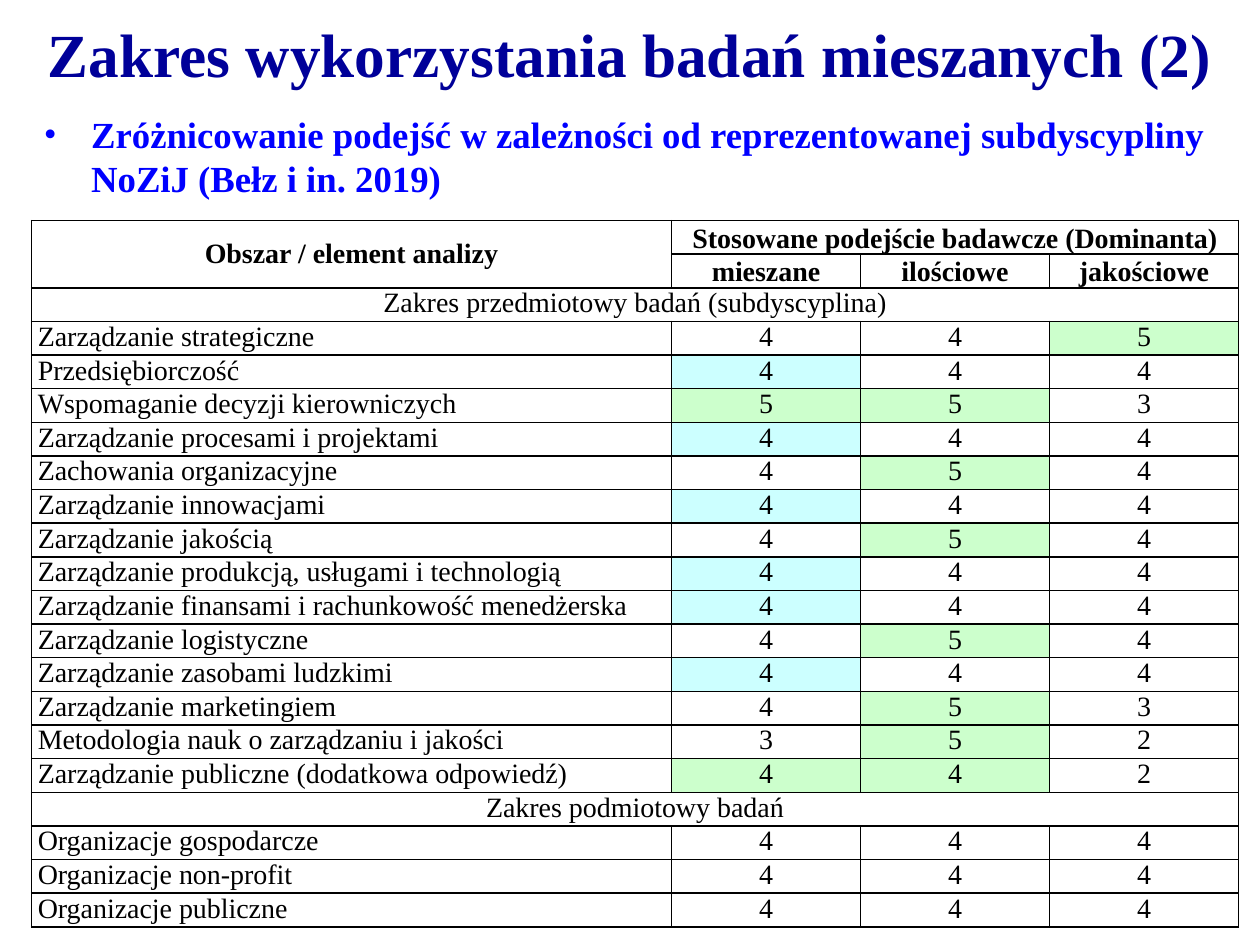
"""Build a slide with a table of research approaches by management subdiscipline."""
from lxml.etree import SubElement
from pptx import Presentation
from pptx.dml.color import RGBColor
from pptx.enum.text import MSO_ANCHOR as Anchor, MSO_AUTO_SIZE as AutoSize, PP_ALIGN as Align
from pptx.oxml.ns import qn
from pptx.util import Pt

FONT = "Times New Roman"
BLACK = RGBColor(0, 0, 0)
WHITE = RGBColor(255, 255, 255)
NAVY = RGBColor(0, 0, 0x99)
BLUE = RGBColor(0, 0, 255)
GREEN = RGBColor(0xCC, 255, 0xCC)
CYAN = RGBColor(0xCC, 255, 255)
FILLS = {"-": WHITE, "g": GREEN, "c": CYAN}

TITLE = "Zakres wykorzystania badań mieszanych (2)"
SUBTITLE = ("Zróżnicowanie podejść w zależności od reprezentowanej subdyscypliny "
            "NoZiJ (Bełz i in. 2019)")
AREA_HEADER = "Obszar / element analizy"
APPROACH_HEADER = "Stosowane podejście badawcze (Dominanta)"
APPROACHES = ["mieszane", "ilościowe", "jakościowe"]
SECTIONS = [
    ("Zakres przedmiotowy badań (subdyscyplina)", [
        ("Zarządzanie strategiczne", (4, 4, 5), "--g"),
        ("Przedsiębiorczość", (4, 4, 4), "c--"),
        ("Wspomaganie decyzji kierowniczych", (5, 5, 3), "gg-"),
        ("Zarządzanie procesami i projektami", (4, 4, 4), "c--"),
        ("Zachowania organizacyjne", (4, 5, 4), "-g-"),
        ("Zarządzanie innowacjami", (4, 4, 4), "c--"),
        ("Zarządzanie jakością", (4, 5, 4), "-g-"),
        ("Zarządzanie produkcją, usługami i technologią", (4, 4, 4), "c--"),
        ("Zarządzanie finansami i rachunkowość menedżerska", (4, 4, 4), "c--"),
        ("Zarządzanie logistyczne", (4, 5, 4), "-g-"),
        ("Zarządzanie zasobami ludzkimi", (4, 4, 4), "c--"),
        ("Zarządzanie marketingiem", (4, 5, 3), "-g-"),
        ("Metodologia nauk o zarządzaniu i jakości", (3, 5, 2), "-g-"),
        ("Zarządzanie publiczne (dodatkowa odpowiedź)", (4, 4, 2), "gg-"),
    ]),
    ("Zakres podmiotowy badań", [
        ("Organizacje gospodarcze", (4, 4, 4), "---"),
        ("Organizacje non-profit", (4, 4, 4), "---"),
        ("Organizacje publiczne", (4, 4, 4), "---"),
    ]),
]
COLUMN_WIDTHS = [365.75, 108, 108, 108]
ROW_HEIGHT = 19.2


def write(frame, text, size=16, color=BLACK, bold=False, align=Align.LEFT, bullet_indent=0):
    paragraph = frame.paragraphs[0]
    paragraph.alignment = align
    if bullet_indent:
        properties = paragraph._p.get_or_add_pPr()
        properties.set("marL", str(Pt(bullet_indent)))
        properties.set("indent", str(-Pt(bullet_indent)))
        SubElement(properties, qn("a:buFont"), typeface=FONT)
        SubElement(properties, qn("a:buChar"), char="•")
    run = paragraph.add_run()
    run.text = text
    run.font.name = FONT
    run.font.size = Pt(size)
    run.font.bold = bold
    run.font.color.rgb = color


def add_text_box(slide, left, top, width, height, auto_size, text, **text_format):
    box = slide.shapes.add_textbox(Pt(left), Pt(top), Pt(width), Pt(height))
    frame = box.text_frame
    frame.word_wrap = True
    frame.auto_size = auto_size
    write(frame, text, **text_format)


def style_cell(cell):
    cell.margin_left = cell.margin_right = Pt(3.6)
    cell.margin_top = cell.margin_bottom = 0
    properties = cell._tc.get_or_add_tcPr()
    for side in ("lnL", "lnR", "lnT", "lnB"):
        line = SubElement(properties, qn(f"a:{side}"), w=str(Pt(1)))
        solid = SubElement(line, qn("a:solidFill"))
        SubElement(solid, qn("a:srgbClr"), val=str(BLACK))
    cell.fill.solid()
    cell.fill.fore_color.rgb = WHITE


def fill_header(table):
    area, approach = table.cell(0, 0), table.cell(0, 1)
    area.merge(table.cell(1, 0))
    approach.merge(table.cell(0, 3))
    names = [table.cell(1, column) for column in (1, 2, 3)]
    texts = [AREA_HEADER, APPROACH_HEADER, *APPROACHES]
    for cell, text in zip([area, approach, *names], texts):
        cell.vertical_anchor = Anchor.MIDDLE if cell is area else Anchor.BOTTOM
        write(cell.text_frame, text, bold=True, align=Align.CENTER)


def fill_sections(table):
    row = 2
    for heading, entries in SECTIONS:
        table.cell(row, 0).merge(table.cell(row, 3))
        write(table.cell(row, 0).text_frame, heading, align=Align.CENTER)
        for row, (name, scores, marks) in enumerate(entries, row + 1):
            write(table.cell(row, 0).text_frame, name)
            for column, (score, mark) in enumerate(zip(scores, marks), 1):
                cell = table.cell(row, column)
                cell.fill.fore_color.rgb = FILLS[mark]
                write(cell.text_frame, str(score), align=Align.CENTER)
        row += 1


def add_score_table(slide):
    row_count = 2 + sum(1 + len(entries) for _, entries in SECTIONS)
    table = slide.shapes.add_table(row_count, len(COLUMN_WIDTHS), Pt(18), Pt(126),
                                   Pt(sum(COLUMN_WIDTHS)), Pt(ROW_HEIGHT * row_count)).table
    table.first_row = table.horz_banding = False
    for column, width in zip(table.columns, COLUMN_WIDTHS):
        column.width = Pt(width)
    for row in table.rows:
        row.height = Pt(ROW_HEIGHT)
    for cell in table.iter_cells():
        style_cell(cell)
    fill_header(table)
    fill_sections(table)


def main():
    presentation = Presentation()
    presentation.slide_width, presentation.slide_height = Pt(720), Pt(540)
    slide = presentation.slides.add_slide(presentation.slide_layouts[6])
    add_text_box(slide, 0, 6, 720, 49, AutoSize.SHAPE_TO_FIT_TEXT, TITLE,
                 size=35, color=NAVY, bold=True, align=Align.CENTER)
    add_text_box(slide, 18, 60.5, 690, 132, AutoSize.NONE, SUBTITLE,
                 size=21, color=BLUE, bold=True, bullet_indent=27)
    add_score_table(slide)
    presentation.save("out.pptx")


if __name__ == "__main__":
    main()
